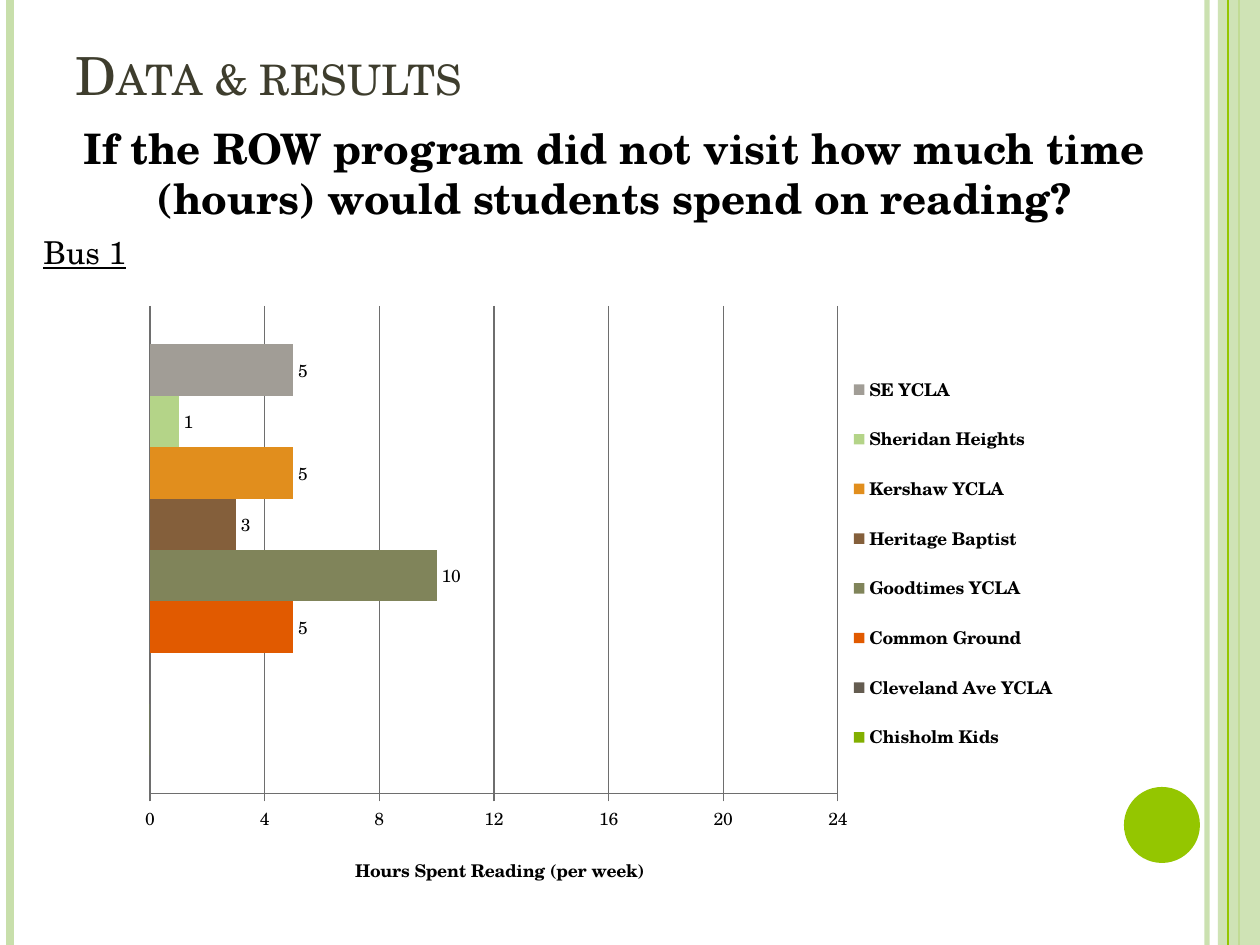
from lxml import etree
from pptx import Presentation, util as u
from pptx.chart.data import CategoryChartData
from pptx.dml.color import RGBColor
from pptx.enum import chart as charts, shapes, text
from pptx.oxml import ns

SCALE = 914400 / 126
FONT = "TeX Gyre Schola"
COLORS = {"white": "FFFFFF", "pale": "C8DFAB", "lime": "94C600",
          "olive": "3E3D2D", "black": "000000", "grid": "6E6E6E"}
STRIPES = [(1207, "pale", 3, 93), (10, "pale", 4.5, 100), (1239, "lime", 1.5, 100)]
FRONT_STRIPE = (1228, "lime", 0.75, 100)
TITLE = "Data & results"
QUESTION = ("If the ROW program did not visit how much time (hours) "
            "would students spend on reading?")
GROUP = "Bus 1"
AXIS_TITLE = "Hours Spent Reading (per week)"
SITES = [("Chisholm Kids", 0, "82AF00"), ("Cleveland Ave YCLA", 0, "645C50"),
         ("Common Ground", 5, "E15A00"), ("Goodtimes YCLA", 10, "80845A"),
         ("Heritage Baptist", 3, "845F3B"), ("Kershaw YCLA", 5, "E18E1D"),
         ("Sheridan Heights", 1, "B4D488"), ("SE YCLA", 5, "A19D96")]
CHART = (126, 294, 966, 609)
PLOT = (150, 306, 688, 488)
LEGEND = (846, 353, 214, 421)
AXIS_TITLE_AT = (352, 853)


def px(value):
    return u.Emu(round(value * SCALE))


def rgb(name):
    return RGBColor.from_string(COLORS.get(name, name))


def set_alpha(fill, percent):
    if percent < 100:
        color = fill.fore_color._color._xClr
        etree.SubElement(color, ns.qn("a:alpha")).set("val", str(percent * 1000))


def add_stripe(page, x, color, width, alpha):
    stripe = page.shapes.add_connector(shapes.MSO_CONNECTOR.STRAIGHT, px(x), 0, px(x), px(945))
    stripe.line.width = u.Pt(width)
    stripe.line.fill.solid()
    stripe.line.color.rgb = rgb(color)
    set_alpha(stripe.line.fill, alpha)
    etree.SubElement(stripe._element.spPr, ns.qn("a:effectLst"))


def add_block(page, kind, box, color, alpha=100):
    block = page.shapes.add_shape(kind, *map(px, box))
    block.shadow.inherit = False
    block.fill.solid()
    block.fill.fore_color.rgb = rgb(color)
    set_alpha(block.fill, alpha)
    block.line.fill.background()


def add_frame(page, box, anchor):
    frame = page.shapes.add_textbox(*map(px, box)).text_frame
    frame.word_wrap = True
    frame.vertical_anchor = anchor
    return frame


def write(para, words, size, color="black", bold=False, underline=False,
          small_caps=False, align=text.PP_ALIGN.LEFT, before=0):
    para.alignment = align
    para.space_before = u.Pt(before)
    span = para.add_run()
    span.text = words
    style_font(span.font, size, color, bold)
    span.font.underline = underline
    if small_caps:
        span._r.get_or_add_rPr().set("cap", "small")


def style_font(font, size=10, color="black", bold=False):
    font.name = FONT
    font.size = u.Pt(size)
    font.bold = bold
    font.color.rgb = rgb(color)


def place(element, index, box, inner=False):
    for old in element.findall(ns.qn("c:layout")):
        element.remove(old)
    layout = etree.Element(ns.qn("c:layout"))
    manual = etree.SubElement(layout, ns.qn("c:manualLayout"))
    left, top, width, height = CHART
    entries = [("layoutTarget", "inner")] if inner else []
    entries += [("xMode", "edge"), ("yMode", "edge")]
    offsets = (box[0] - left, box[1] - top, *box[2:])
    for tag, value, whole in zip("xywh", offsets, (width, height, width, height)):
        entries.append((tag, f"{value / whole:.4f}"))
    for tag, value in entries:
        etree.SubElement(manual, ns.qn("c:" + tag)).set("val", value)
    element.insert(index, layout)


def add_hours_chart(page):
    data = CategoryChartData()
    data.categories = ["1"]
    for name, hours, _ in SITES:
        data.add_series(name, [hours])
    chart = page.shapes.add_chart(charts.XL_CHART_TYPE.BAR_CLUSTERED,
                                  *map(px, CHART), data).chart
    style_font(chart.font)
    chart.has_title = False
    plot = chart.plots[0]
    plot.gap_width = 150
    plot.overlap = 0
    plot.vary_by_categories = False
    for series, (_, hours, color) in zip(plot.series, SITES):
        series.format.fill.solid()
        series.format.fill.fore_color.rgb = rgb(color)
        if hours:
            series.data_labels.show_value = True
            series.data_labels.position = charts.XL_LABEL_POSITION.OUTSIDE_END
            style_font(series.data_labels.font)

    chart.category_axis.visible = False
    axis = chart.value_axis
    axis.minimum_scale, axis.maximum_scale, axis.major_unit = 0, 24, 4
    axis.major_tick_mark = charts.XL_TICK_MARK.OUTSIDE
    axis.has_major_gridlines = True
    for line in (axis.format.line, axis.major_gridlines.format.line):
        line.color.rgb = rgb("grid")
        line.width = u.Pt(0.75)
    write(axis.axis_title.text_frame.paragraphs[0], AXIS_TITLE, 10, bold=True)

    chart.has_legend = True
    chart.legend.position = charts.XL_LEGEND_POSITION.RIGHT
    chart.legend.include_in_layout = False
    style_font(chart.legend.font, bold=True)
    place(chart._chartSpace.chart.plotArea, 0, PLOT, inner=True)
    place(chart.legend._element, 1, LEGEND)
    place(axis.axis_title._element, 1, AXIS_TITLE_AT)


def main():
    deck = Presentation()
    deck.slide_width, deck.slide_height = px(1260), px(945)
    page = deck.slides.add_slide(deck.slide_layouts[6])
    page.background.fill.solid()
    page.background.fill.fore_color.rgb = rgb("white")

    for stripe in STRIPES:
        add_stripe(page, *stripe)
    add_block(page, shapes.MSO_SHAPE.RECTANGLE, (1218, 0, 42, 945), "pale", 87)
    add_stripe(page, *FRONT_STRIPE)
    add_block(page, shapes.MSO_SHAPE.OVAL, (1124, 787, 76, 76), "lime")

    heading = add_frame(page, (63, 21, 1030, 91), text.MSO_ANCHOR.BOTTOM)
    write(heading.paragraphs[0], TITLE, 30, "olive", small_caps=True)
    body = add_frame(page, (31, 116, 1166, 703), text.MSO_ANCHOR.TOP)
    write(body.paragraphs[0], QUESTION, 24, bold=True,
          align=text.PP_ALIGN.CENTER, before=6)
    write(body.add_paragraph(), GROUP, 18, underline=True, before=6)
    add_hours_chart(page)
    deck.save("out.pptx")


if __name__ == "__main__":
    main()
